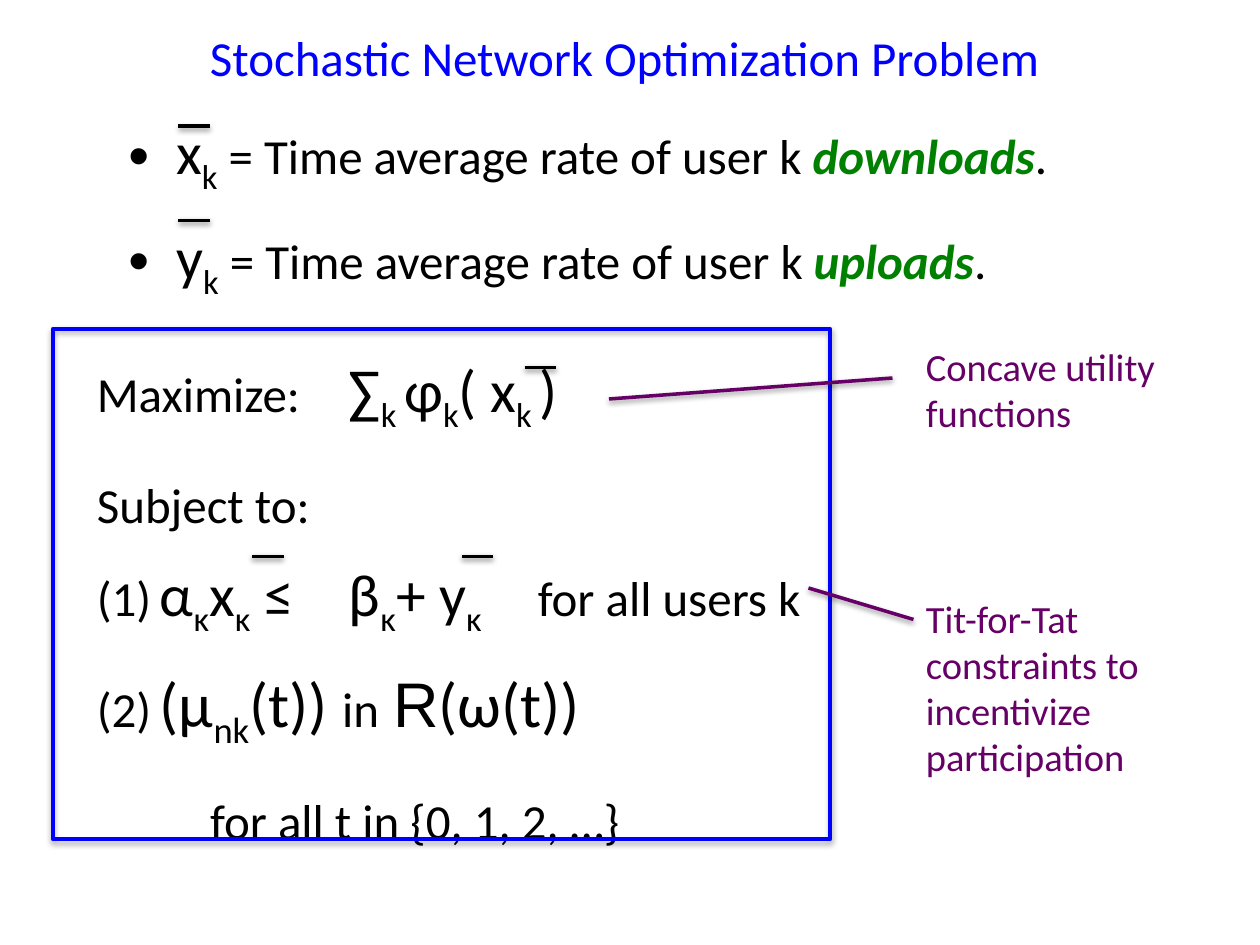
"""Build the slide that states the stochastic network optimization problem."""
import pptx
import pptx.dml.color
import pptx.enum.shapes
import pptx.enum.text
import pptx.oxml
import pptx.oxml.ns
import pptx.util
from lxml import etree

Inches, Pt = pptx.util.Inches, pptx.util.Pt

COLORS = {"ink": "000000", "frame": "0000FF", "stress": "008000", "note": "660066"}
TEXT, MATH, REGION = 28, 34, 36
LEADING = 1.3
GRID = 1 / 12

TITLE = "Stochastic Network Optimization Problem"
RATES = [("x", "downloads"), ("y", "uploads")]
PROBLEM = [
    {"runs": [("Maximize:\t", TEXT), ("∑", MATH), ("k ", MATH, "sub"), ("φ", MATH),
              ("k", MATH, "sub"), ("( x", MATH), ("k ", MATH, "sub"), (")", MATH)],
     "tabs": [2.22]},
    {"runs": [("Subject to:", TEXT)], "before": 12.7},
    {"runs": [("(1)\t", TEXT), ("α", MATH), ("κ", MATH, "sub"), ("x", MATH),
              ("κ", MATH, "sub"), (" ≤\tβ", MATH), ("κ", MATH, "sub"), ("+ y", MATH),
              ("κ", MATH, "sub"), ("\tfor all users k", TEXT)],
     "tabs": [0.86, 2.14, 3.4]},
    {"runs": [("(2)\t", TEXT), ("(μ", REGION), ("nk", REGION, "sub"), ("(t)) ", REGION),
              ("in", TEXT), (" ", REGION), ("R", REGION, "region"), ("(ω(t))", REGION)],
     "tabs": [0.86]},
    {"runs": [("for all t in {0, 1, 2, …}", TEXT)], "before": 12.7, "indent": 0.9},
]
NOTES = [
    (2.67, 2.05, 0.84, ["Concave utility", "functions"]),
    (4.67, 1.93, 1.58, ["Tit-for-Tat", "constraints to", "incentivize", "participation"]),
]
POINTERS = [((85, 36), (58, 38)), ((87, 59), (77, 56))]
OVERBARS = [(17, 12), (17, 21), (50, 35), (44, 53), (24, 53)]
OVERBAR_WIDTH = 3

deck = pptx.Presentation()
deck.slide_width, deck.slide_height = Inches(10), Inches(7.5)
slide = deck.slides.add_slide(deck.slide_layouts[6])


def rgb(name):
    return pptx.dml.color.RGBColor.from_string(COLORS[name])


def add_text(left, top, width, height, wrap=True):
    frame = slide.shapes.add_textbox(*map(Inches, (left, top, width, height))).text_frame
    frame.word_wrap = wrap
    frame.auto_size = pptx.enum.text.MSO_AUTO_SIZE.SHAPE_TO_FIT_TEXT
    return frame


def add_lines(frame, lines):
    for index, line in enumerate(lines):
        paragraph = frame.paragraphs[0] if index == 0 else frame.add_paragraph()
        paragraph.font.name = "Calibri"
        yield paragraph, line


def add_runs(paragraph, runs):
    paragraph.line_spacing = LEADING
    paragraph.font.color.rgb = rgb("ink")
    for text, size, *style in runs:
        run = paragraph.add_run()
        run.text = text
        run.font.size = Pt(size)
        if "sub" in style:
            run.font._element.set("baseline", "-25000")
        if "region" in style:
            run.font.name = "Arial"
        if "stress" in style:
            run.font.bold = run.font.italic = True
            run.font.color.rgb = rgb("stress")


def set_indent(paragraph, margin, first=0):
    properties = paragraph._p.get_or_add_pPr()
    properties.set("marL", str(Inches(margin)))
    properties.set("indent", str(Inches(first)))
    return properties


def add_child(parent, tag, **attributes):
    child = etree.SubElement(parent, pptx.oxml.ns.qn(tag))
    for key, value in attributes.items():
        child.set(key, str(value))
    return child


def add_shadow(shape, distance, opacity):
    effects = add_child(shape._element.spPr, "a:effectLst")
    shadow = add_child(effects, "a:outerShdw", blurRad=Pt(3.1), dist=Pt(distance),
                       dir=90 * 60000, rotWithShape=0)
    color = add_child(shadow, "a:srgbClr", val=COLORS["ink"])
    add_child(color, "a:alpha", val=opacity * 1000)


def add_rule(start, end, color, width):
    points = [Inches(step * GRID) for step in (*start, *end)]
    rule = slide.shapes.add_connector(pptx.enum.shapes.MSO_CONNECTOR.STRAIGHT, *points)
    rule.line.color.rgb = rgb(color)
    rule.line.width = Pt(width)
    add_shadow(rule, 1.6, 38)


for heading, text in add_lines(add_text(1.51, 0.17, 6.89, 0.57, wrap=False), [TITLE]):
    heading.text = text
    heading.alignment = pptx.enum.text.PP_ALIGN.CENTER
    heading.font.size = Pt(TEXT)
    heading.font.color.rgb = rgb("frame")

for bullet, (symbol, direction) in add_lines(add_text(0.92, 0.67, 8.42, 1.56), RATES):
    add_runs(bullet, [(symbol, MATH), ("k", MATH, "sub"),
                      (" = Time average rate of user k ", TEXT),
                      (direction, TEXT, "stress"), (".", TEXT)])
    marker = pptx.oxml.parse_xml(
        f'<a:buChar {pptx.oxml.ns.nsdecls("a")} char="•"/>')
    properties = set_indent(bullet, 0.38, -0.38)
    properties.find(pptx.oxml.ns.qn("a:lnSpc")).addnext(marker)
    marker.addprevious(pptx.oxml.parse_xml(
        f'<a:buFont {pptx.oxml.ns.nsdecls("a")} typeface="Arial"/>'))

for formula, row in add_lines(add_text(0.67, 2.56, 6.25, 4.05), PROBLEM):
    add_runs(formula, row["runs"])
    formula.space_before = Pt(row.get("before", 0))
    properties = set_indent(formula, row.get("indent", 0))
    if "tabs" in row:
        stops = pptx.oxml.parse_xml(f'<a:tabLst {pptx.oxml.ns.nsdecls("a")}/>')
        for stop in row["tabs"]:
            add_child(stops, "a:tab", pos=Inches(stop), algn="l")
        properties.find(pptx.oxml.ns.qn("a:spcBef")).addnext(stops)

problem_box = slide.shapes.add_shape(pptx.enum.shapes.MSO_SHAPE.RECTANGLE,
                                     *map(Inches, (0.42, 2.61, 6.17, 4.05)))
problem_box.fill.background()
problem_box.line.color.rgb = rgb("frame")
problem_box.line.width = Pt(2.25)
add_shadow(problem_box, 1.8, 35)

for top, width, height, lines in NOTES:
    for note, text in add_lines(add_text(7.25, top, width, height, wrap=False), lines):
        note.text = text
        note.font.size = Pt(22)
        note.font.color.rgb = rgb("note")

for start, end in POINTERS:
    add_rule(start, end, "note", 2)
for column, row in OVERBARS:
    add_rule((column, row), (column + OVERBAR_WIDTH, row), "ink", 2.25)

deck.save("out.pptx")
